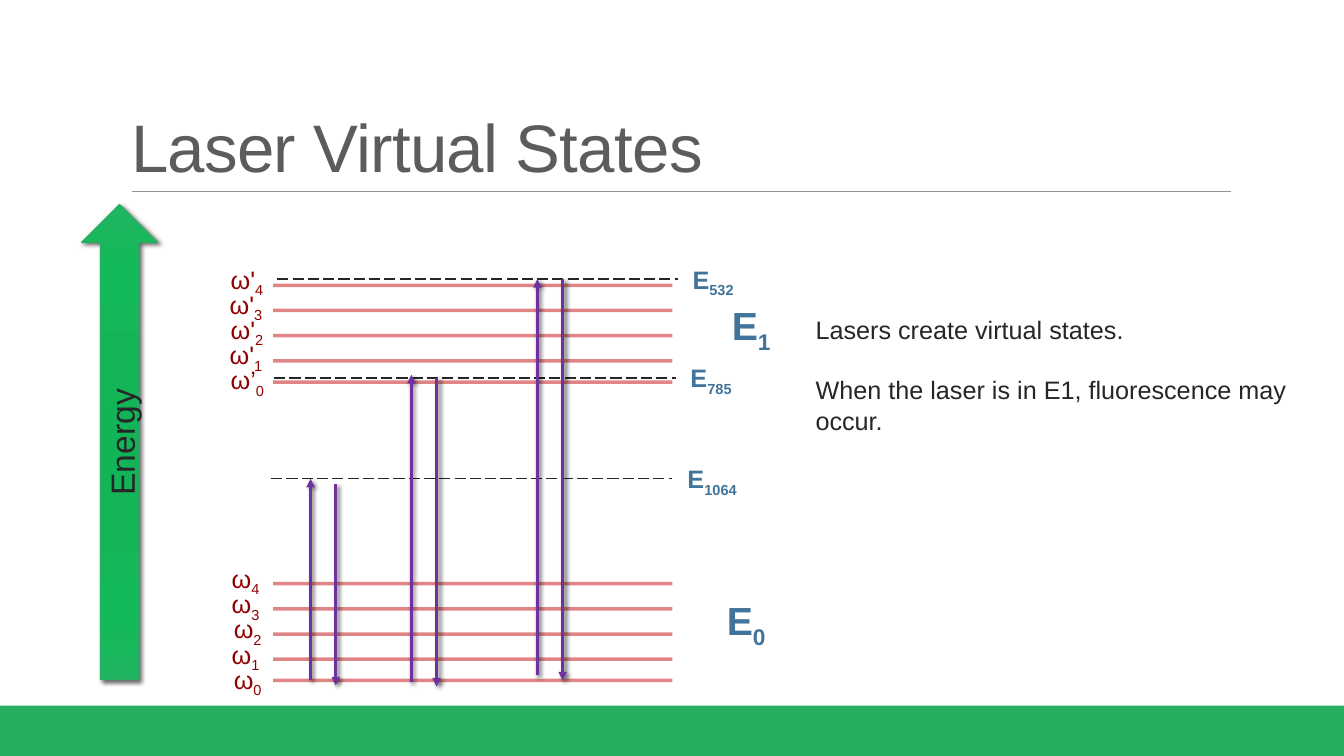
import pptx
import pptx.dml.color
import pptx.enum.dml
import pptx.enum.shapes
import pptx.enum.text
import pptx.oxml
import pptx.oxml.ns
import pptx.util

Inches, Pt = pptx.util.Inches, pptx.util.Pt
RGBColor = pptx.dml.color.RGBColor
SHAPES = pptx.enum.shapes.MSO_SHAPE
TEXT = pptx.enum.text

GREEN = RGBColor(0x27, 0xAE, 0x61)
GRAY = RGBColor(0x5C, 0x5C, 0x5C)
RULE_GRAY = RGBColor(0x92, 0x92, 0x92)
RED = RGBColor(0xC0, 0x00, 0x00)
DARK_RED = RGBColor(0x90, 0x00, 0x00)
BLUE = RGBColor(0x40, 0x74, 0x9B)
PURPLE = RGBColor(0x70, 0x30, 0xA0)
INK = RGBColor(0x26, 0x26, 0x26)

# Content
TITLE = "Laser Virtual States"
NOTES = ["Lasers create virtual states.",
         "When the laser is in E1, fluorescence may occur."]
# Bands: lowest level y, lowest label top, label width, (symbol, label left) from level 0 up
BANDS = [
    (6.75, 6.54, 0.49, [("ω", 2.22), ("ω", 2.2), ("ω", 2.22), ("ω", 2.2), ("ω", 2.2)]),
    (3.79, 3.57, 0.54, [("ω’", 2.19), ("ω'", 2.18), ("ω'", 2.19), ("ω'", 2.18), ("ω'", 2.19)]),
]
LEVEL_STEP = 0.25
LOWEST_LIFT = 0.04  # level 0 sits this much above the regular grid
BAND_NAMES = [("0", 7.11, 5.87), ("1", 7.16, 2.94)]
# Virtual states: subscript, line left, line right, y, label width
VIRTUAL_STATES = [("1064", 2.69, 6.67, 4.75, 0.74),
                  ("532", 2.75, 6.72, 2.77, 0.65),
                  ("785", 2.72, 6.7, 3.75, 0.65)]
# Transitions: x of excitation, its start and end, start and end of the emission
TRANSITIONS = [(3.08, 6.75, 4.75, 4.8, 6.8),
               (4.08, 6.77, 3.72, 3.75, 6.81),
               (5.33, 6.7, 2.77, 2.77, 6.75)]
PAIR_GAP = 0.25
ARROW_STOPS = [(0, "11B558"), (34, "15B459"), (70, "12BA5A"), (100, "20B560")]

NAMESPACE = pptx.oxml.ns.nsdecls("a")
SHADOW = (f'<a:effectLst {NAMESPACE}><a:outerShdw blurRad="38100" dist="25400" dir="2700000" '
          'rotWithShape="0"><a:srgbClr val="000000"><a:alpha val="60000"/></a:srgbClr>'
          '</a:outerShdw></a:effectLst>')
NO_EFFECT = f"<a:effectLst {NAMESPACE}/>"


def append_xml(parent, xml):
    parent.append(pptx.oxml.parse_xml(xml))


def style_run(run, size, color, bold=False):
    run.font.name = "Arial"
    run.font.size = Pt(size)
    run.font.color.rgb = color
    run.font.bold = bold


def add_line(slide, start, end, color, width, dash=None, alpha=None, arrow=False):
    line = slide.shapes.add_connector(pptx.enum.shapes.MSO_CONNECTOR.STRAIGHT,
                                      *map(Inches, start + end))
    line.line.color.rgb = color
    line.line.width = Pt(width)
    if dash:
        line.line.dash_style = dash
    properties = line.line._get_or_add_ln()
    if alpha:
        color_element = properties.find(".//" + pptx.oxml.ns.qn("a:srgbClr"))
        append_xml(color_element, f'<a:alpha {NAMESPACE} val="{alpha * 1000}"/>')
    if arrow:
        append_xml(properties, f'<a:tailEnd {NAMESPACE} type="triangle"/>')
    append_xml(line._element.spPr, SHADOW if arrow else NO_EFFECT)


def add_label(slide, place, text, size, color, subscript="", bold=False):
    box = slide.shapes.add_textbox(*map(Inches, place))
    frame = box.text_frame
    frame.word_wrap = False
    frame.auto_size = TEXT.MSO_AUTO_SIZE.SHAPE_TO_FIT_TEXT
    frame.text = text
    paragraph = frame.paragraphs[0]
    if subscript:
        lowered = paragraph.add_run()
        lowered.text = subscript
        lowered.font._element.set("baseline", "-25000")
    for run in paragraph.runs:
        style_run(run, size, color, bold)
    return box


def add_frame(slide):
    bar = slide.shapes.add_shape(SHAPES.RECTANGLE, 0, Inches(7), Inches(13.33), Inches(0.5))
    bar.shadow.inherit = False
    bar.fill.solid()
    bar.fill.fore_color.rgb = GREEN
    bar.line.fill.background()
    add_line(slide, (1.31, 1.9), (12.21, 1.9), RULE_GRAY, 0.5)

    title = slide.shapes.title
    title.left, title.top, title.width, title.height = map(Inches, (1.2, 0.31, 11, 1.59))
    title.text_frame.text = TITLE
    title.text_frame.vertical_anchor = TEXT.MSO_ANCHOR.BOTTOM
    paragraph = title.text_frame.paragraphs[0]
    paragraph.alignment = TEXT.PP_ALIGN.LEFT
    paragraph.line_spacing = 0.85
    style_run(paragraph.runs[0], 48, GRAY)
    paragraph.runs[0].font._element.set("spc", "-50")


def add_levels(slide):
    for base, label_top, label_width, labels in BANDS:
        for level, (symbol, left) in enumerate(labels):
            rise = level * LEVEL_STEP
            y = base - rise + (LOWEST_LIFT if level else 0)
            add_line(slide, (2.71, y), (6.67, y), RED, 2.5, alpha=48)
            add_label(slide, (left, label_top - rise, label_width, 0.4),
                      symbol, 18, DARK_RED, str(level))
    for subscript, left, top in BAND_NAMES:
        add_label(slide, (left, top, 0.61, 0.57), "E", 28, BLUE, subscript, True)


def add_transitions(slide):
    for subscript, left, right, y, width in VIRTUAL_STATES:
        add_line(slide, (left, y), (right, y), INK, 1,
                 dash=pptx.enum.dml.MSO_LINE.LONG_DASH)
        add_label(slide, (right + 0.05, y - 0.2, width, 0.4), "E", 18, BLUE, subscript, True)
    for x, up_start, up_end, down_start, down_end in TRANSITIONS:
        add_line(slide, (x, up_start), (x, up_end), PURPLE, 2, arrow=True)
        x += PAIR_GAP
        add_line(slide, (x, down_start), (x, down_end), PURPLE, 2, arrow=True)


def add_notes_text(slide):
    box = slide.shapes.add_textbox(*map(Inches, (7.99, 3.07, 5.18, 1.31)))
    frame = box.text_frame
    frame.word_wrap = True
    frame.text = "\n".join(NOTES)
    for index, paragraph in enumerate(frame.paragraphs):
        if index:
            paragraph.space_before = Pt(21.5)
        style_run(paragraph.runs[0], 18, INK)


def add_energy_arrow(slide):
    arrow = slide.shapes.add_shape(SHAPES.UP_ARROW, *map(Inches, (0.81, 2.03, 0.75, 4.71)))
    arrow.line.color.rgb = GREEN
    arrow.line.width = Pt(1)
    stops = "".join(f'<a:gs pos="{position * 1000}"><a:srgbClr val="{color}"/></a:gs>'
                    for position, color in ARROW_STOPS)
    properties = arrow._element.spPr
    properties.insert(2, pptx.oxml.parse_xml(
        f'<a:gradFill {NAMESPACE} rotWithShape="1"><a:gsLst>{stops}</a:gsLst>'
        '<a:path path="circle"><a:fillToRect l="100000" t="100000" r="100000" b="100000"/>'
        '</a:path></a:gradFill>'))
    append_xml(properties, SHADOW)
    label = add_label(slide, (0.57, 4.13, 1.27, 0.5), "Energy", 24, INK)
    label.rotation = 270


def main():
    presentation = pptx.Presentation()
    presentation.slide_width = Inches(13.33)
    presentation.slide_height = Inches(7.5)
    slide = presentation.slides.add_slide(presentation.slide_layouts[5])
    add_frame(slide)
    add_levels(slide)
    add_transitions(slide)
    add_notes_text(slide)
    add_energy_arrow(slide)
    presentation.save("out.pptx")


if __name__ == "__main__":
    main()
